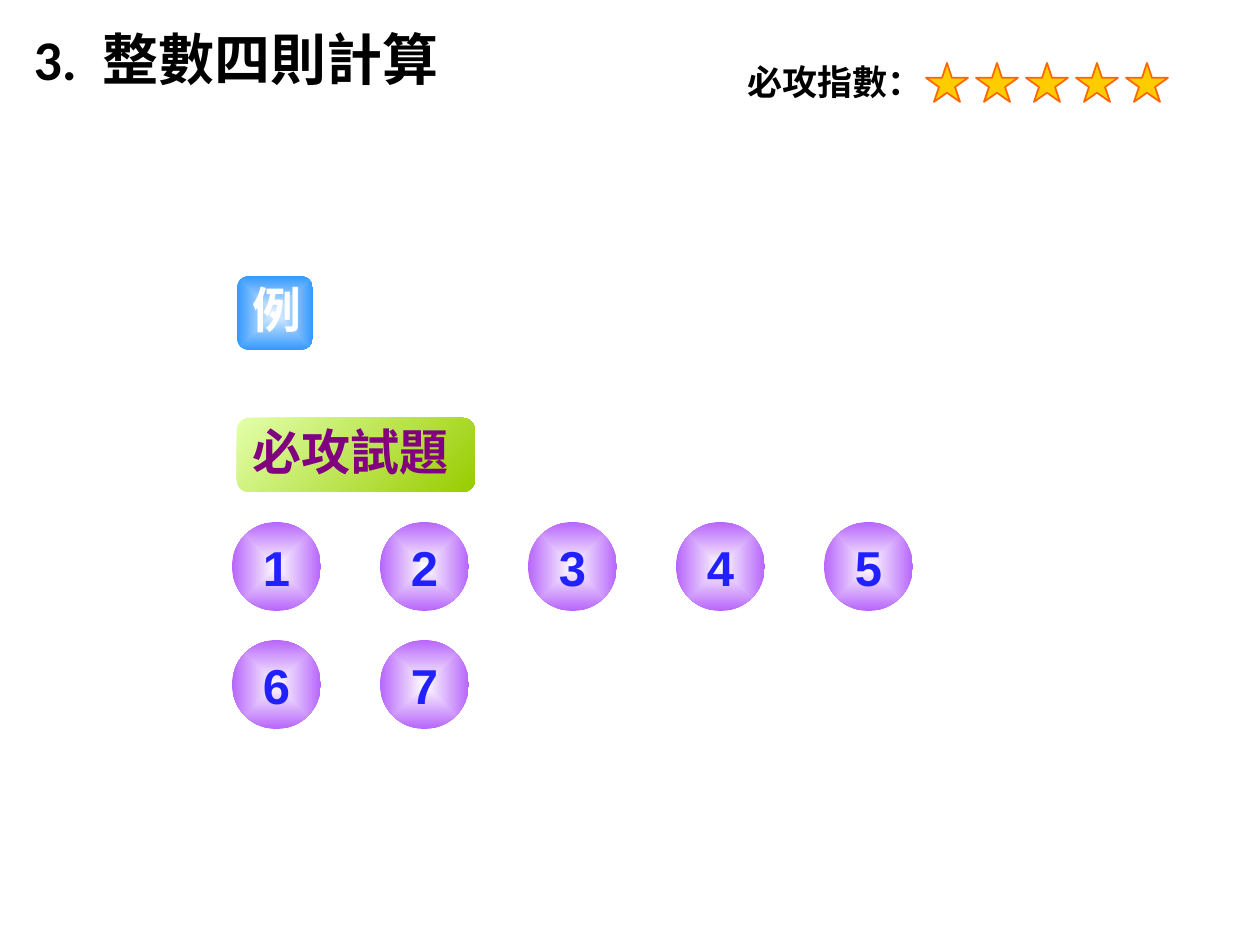
"""Build the integer arithmetic index slide with its star rating and question buttons."""
import dataclasses

import lxml.etree
import pptx
import pptx.dml.color
import pptx.enum.shapes
import pptx.enum.text
import pptx.oxml.ns
import pptx.util


@dataclasses.dataclass(frozen=True)
class Theme:
    ink: str = "000000"
    star: str = "FFCC00"
    star_edge: str = "FF6600"
    number: str = "2121FF"
    example: str = "FFFFFF"
    practice: str = "800080"
    number_glow: tuple = ("FFFFFF", "B765FB")
    example_glow: tuple = ("E5F2FF", "3399FF")
    practice_fade: tuple = ("E3FFAB", "99CC00")
    title_size: int = 32
    button_size: int = 28
    rating_size: int = 20
    latin: str = "Arial"
    title_latin: str = "Calibri"
    title_cjk: str = "Noto Sans CJK TC"
    button_cjk: str = "Noto Sans CJK SC"


THEME = Theme()
PX = pptx.util.Inches(1) / 126
qn = pptx.oxml.ns.qn
rgb = pptx.dml.color.RGBColor.from_string
SHAPE = pptx.enum.shapes.MSO_SHAPE
ALIGN = pptx.enum.text.PP_ALIGN
ANCHOR = pptx.enum.text.MSO_ANCHOR


def box(*lengths):
    return [round(length * PX) for length in lengths]


def add_run(paragraph, text, size, face, color):
    run = paragraph.add_run()
    run.text = text
    run.font.size = pptx.util.Pt(size)
    run.font.bold = True
    run.font.color.rgb = rgb(color)
    run.font.name = face
    properties = run.font._element
    lxml.etree.SubElement(properties, qn("a:ea")).set("typeface", face)
    return properties


deck = pptx.Presentation()
deck.slide_width, deck.slide_height = box(1260, 945)
slide = deck.slides.add_slide(deck.slide_layouts[5])
shapes = slide.shapes

title = shapes.title
title.left, title.top, title.width, title.height = box(21, 18, 827, 103)
title.text_frame.vertical_anchor = ANCHOR.TOP
heading = title.text_frame.paragraphs[0]
heading.alignment = ALIGN.LEFT
add_run(heading, "3.", THEME.title_size, THEME.title_latin, THEME.ink)
gap = add_run(heading, " ", THEME.title_size, THEME.title_latin, THEME.ink)
gap.set("spc", "720")
add_run(heading, "整數四則計算", THEME.title_size, THEME.title_cjk, THEME.ink)

rating = shapes.add_textbox(*box(735, 54, 238, 58))
rating.text_frame.word_wrap = True
add_run(rating.text_frame.paragraphs[0], "必攻指數：",
        THEME.rating_size, THEME.title_cjk, THEME.ink)

for position in range(5):
    star = shapes.add_shape(SHAPE.STAR_5_POINT, *box(926 + 50 * position, 63, 42, 39))
    star.shadow.inherit = False
    star.fill.solid()
    star.fill.fore_color.rgb = rgb(THEME.star)
    star.line.color.rgb = rgb(THEME.star_edge)
    star.line.width = pptx.util.Pt(1)

buttons = [
    ("例", SHAPE.ROUNDED_RECTANGLE, (237, 276, 76, 74), THEME.example_glow,
     THEME.button_cjk, THEME.example, ALIGN.CENTER),
    ("必攻試題", SHAPE.ROUNDED_RECTANGLE, (237, 418, 238, 74), THEME.practice_fade,
     THEME.button_cjk, THEME.practice, ALIGN.LEFT),
]
for index in range(7):
    row, column = divmod(index, 5)
    buttons.append((str(index + 1), SHAPE.OVAL, (232 + 148 * column, 522 + 118 * row, 89, 89),
                    THEME.number_glow, THEME.latin, THEME.number, ALIGN.CENTER))

for label, outline, place, colors, face, ink, alignment in buttons:
    button = shapes.add_shape(outline, *box(*place))
    button.shadow.inherit = False
    button.line.fill.background()
    button.fill.gradient()
    for stop, color in zip(button.fill.gradient_stops, colors):
        stop.color.rgb = rgb(color)
    if colors == THEME.practice_fade:
        button.fill.gradient_angle = 315
    else:
        gradient = button._element.spPr.find(qn("a:gradFill"))
        gradient.remove(gradient.find(qn("a:lin")))
        glow = lxml.etree.SubElement(gradient, qn("a:path"))
        glow.set("path", "shape")
        center = lxml.etree.SubElement(glow, qn("a:fillToRect"))
        for side in "ltrb":
            center.set(side, "50000")

    frame = button.text_frame
    paragraph = frame.paragraphs[0]
    paragraph.alignment = alignment
    if outline == SHAPE.OVAL:
        frame.word_wrap = False
        frame.vertical_anchor = ANCHOR.MIDDLE
    else:
        frame.word_wrap = True
        frame.vertical_anchor = ANCHOR.TOP
        paragraph.line_spacing = pptx.util.Pt(30)
    add_run(paragraph, label, THEME.button_size, face, ink)

deck.save("out.pptx")
